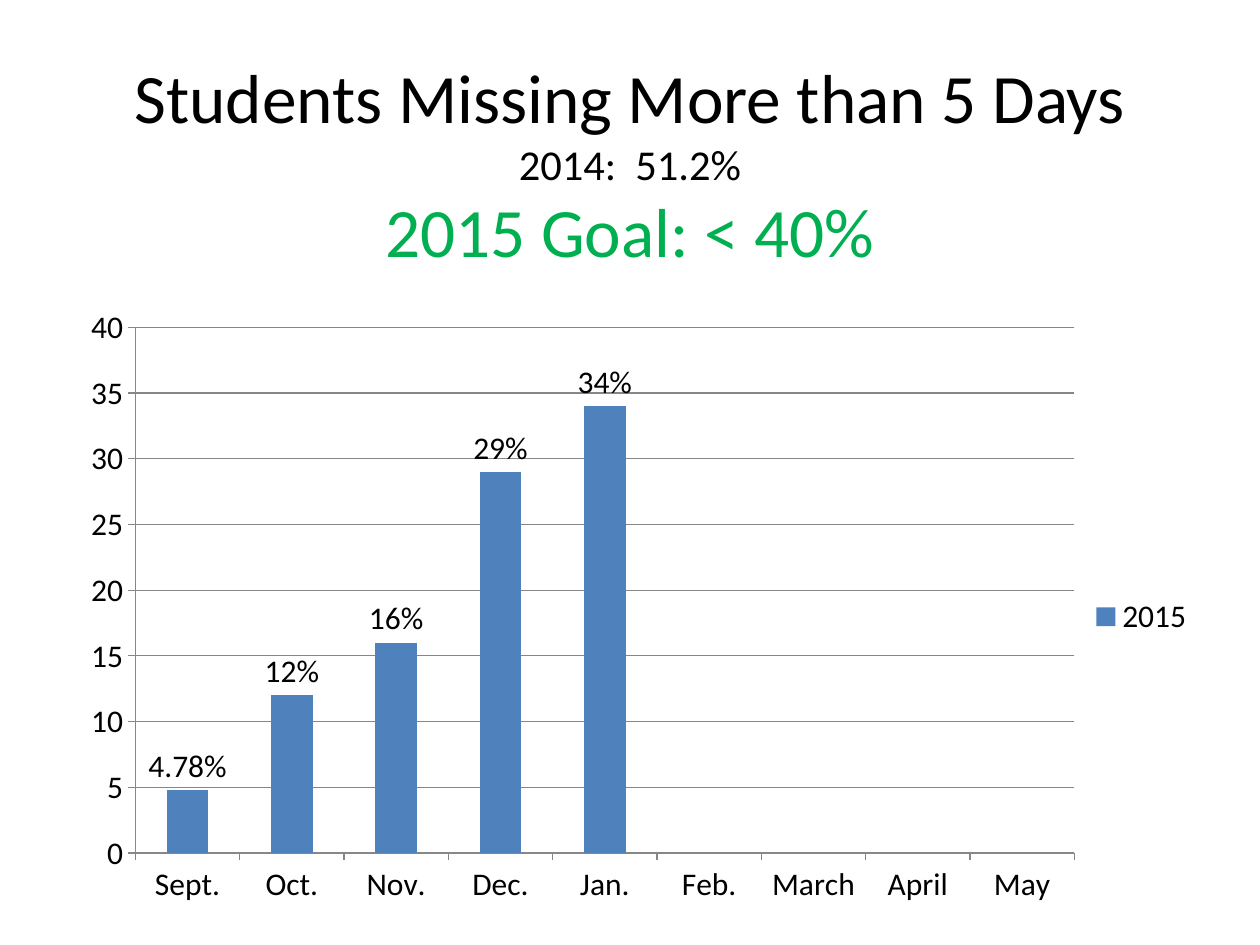
from lxml.etree import SubElement
from pptx import Presentation
from pptx.chart.data import CategoryChartData
from pptx.dml.color import RGBColor
from pptx.enum.chart import XL_CHART_TYPE, XL_LABEL_POSITION, XL_LEGEND_POSITION, XL_TICK_MARK
from pptx.enum.text import MSO_ANCHOR, MSO_AUTO_SIZE, PP_ALIGN
from pptx.oxml.ns import qn
from pptx.util import Inches, Pt

COLORS = {"text": "000000", "goal": "00B050", "bar": "4F81BD", "grid": "878787"}
FONT = "Calibri"


def add_line(p, text, size=39.6, color="text", last=False):
    """Add one line of text to the paragraph, with a break of the same size."""
    r = p.add_run()
    r.text = text
    r.font.name, r.font.size = FONT, Pt(size)
    r.font.color.rgb = RGBColor.from_string(COLORS[color])
    if not last:
        p.add_line_break()
        SubElement(p._p[-1], qn("a:rPr"), sz=str(round(size * 100)))


prs = Presentation()
prs.slide_width, prs.slide_height = Inches(10), Inches(7.5)
W, H = prs.slide_width, prs.slide_height
s = prs.slides.add_slide(prs.slide_layouts[5])

# Title with last year's rate and this year's goal
sp = s.shapes.title
sp.left, sp.top, sp.width, sp.height = int(W * 0.05), Inches(0.67), int(W * 0.9), Inches(1.25)
tf = sp.text_frame
tf.word_wrap = True
tf.auto_size = MSO_AUTO_SIZE.NONE
tf.vertical_anchor = MSO_ANCHOR.MIDDLE
p = tf.paragraphs[0]
p.alignment = PP_ALIGN.CENTER
add_line(p, "Students Missing More than 5 Days")
add_line(p, "2014:  51.2%", size=24.3)
add_line(p, "2015 Goal: < 40%", color="goal", last=True)

# Monthly column chart
data = CategoryChartData()
data.categories = ["Sept.", "Oct.", "Nov.", "Dec.", "Jan.", "Feb.", "March", "April", "May"]
data.add_series("2015", [4.78, 12, 16, 29, 34] + [None] * 4)
chart = s.shapes.add_chart(XL_CHART_TYPE.COLUMN_CLUSTERED, Inches(0.58), Inches(2.42),
                           int(W * 0.9), int(H * 0.66), data).chart
chart.has_title = False
chart.font.name, chart.font.size = FONT, Pt(18)
chart.font.color.rgb = RGBColor.from_string(COLORS["text"])
chart.has_legend = True
chart.legend.position = XL_LEGEND_POSITION.RIGHT
chart.legend.include_in_layout = False

# Bars and value labels
plot = chart.plots[0]
plot.gap_width = 150
plot.vary_by_categories = False
fill = plot.series[0].format.fill
fill.solid()
fill.fore_color.rgb = RGBColor.from_string(COLORS["bar"])
labels = plot.series[0].data_labels
labels.show_value = True
labels.number_format, labels.number_format_is_linked = 'General"%"', False
labels.position = XL_LABEL_POSITION.OUTSIDE_END

# Axes and gridlines
val_axis, cat_axis = chart.value_axis, chart.category_axis
val_axis.minimum_scale, val_axis.maximum_scale, val_axis.major_unit = 0, 40, 5
val_axis.has_major_gridlines = True
for axis in (val_axis, cat_axis):
    axis.major_tick_mark = XL_TICK_MARK.OUTSIDE
    axis.minor_tick_mark = XL_TICK_MARK.NONE
for part in (val_axis, cat_axis, val_axis.major_gridlines):
    part.format.line.width = Pt(0.75)
    part.format.line.color.rgb = RGBColor.from_string(COLORS["grid"])

# Inner plot area as shares of the chart's size
area = chart._chartSpace.chart.plotArea
for old in area.findall(qn("c:layout")):
    area.remove(old)
layout = SubElement(area, qn("c:layout"))
area.insert(0, layout)
manual = SubElement(layout, qn("c:manualLayout"))
for tag, val in (("layoutTarget", "inner"), ("xMode", "edge"), ("yMode", "edge"),
                 ("x", 0.055), ("y", 0.036), ("w", 0.828), ("h", 0.843)):
    SubElement(manual, qn(f"c:{tag}"), val=str(val))

prs.save("out.pptx")
